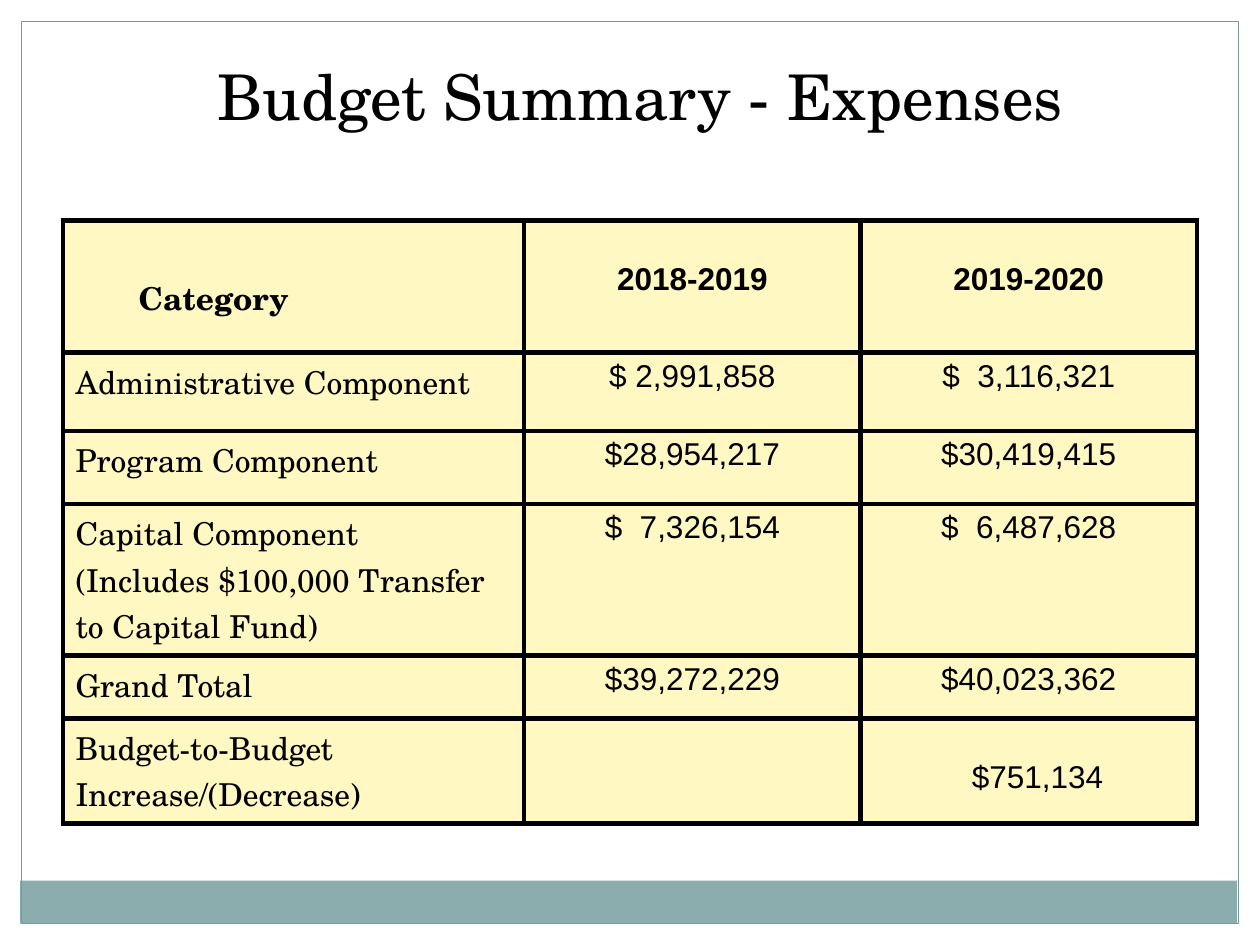
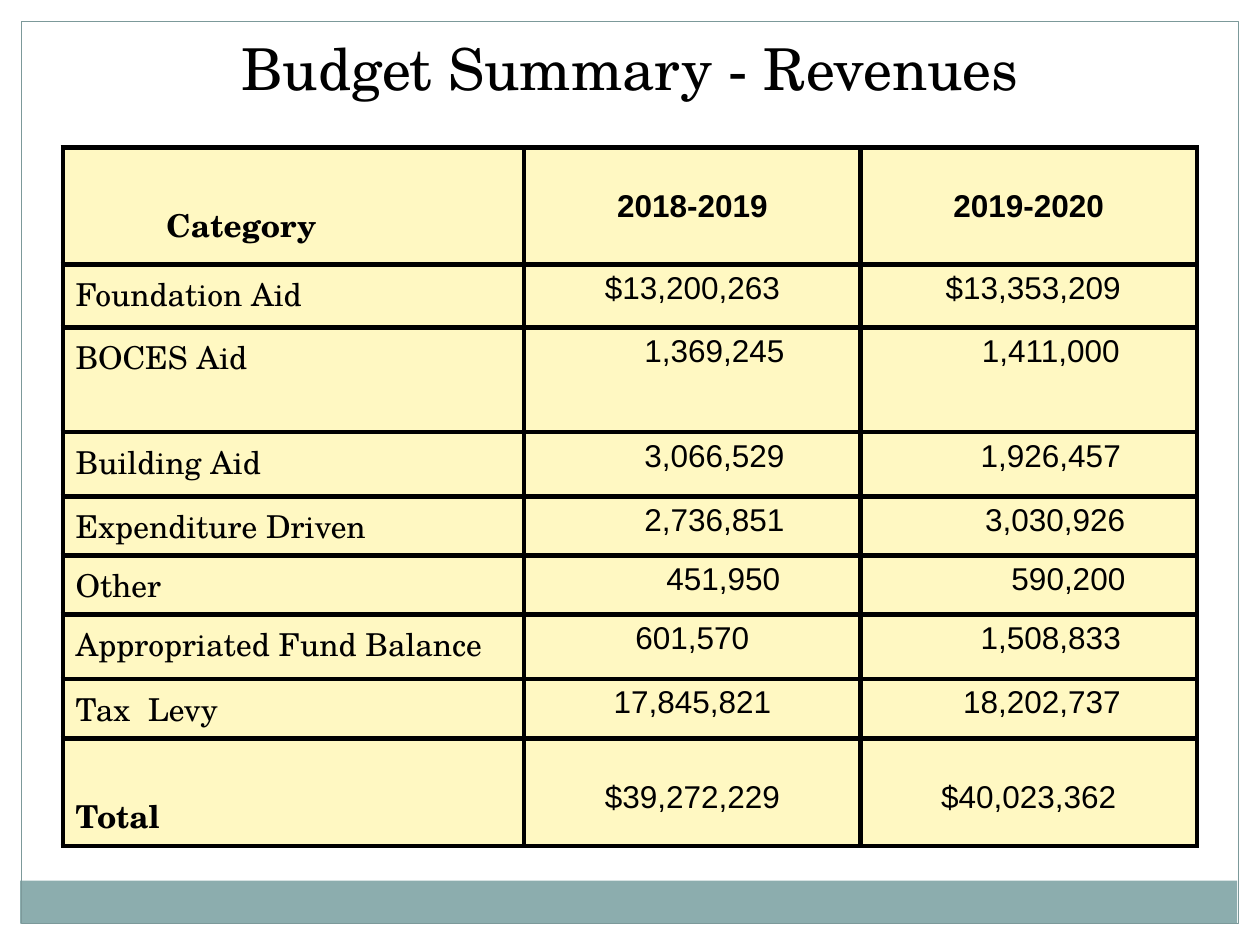
from dataclasses import dataclass

from lxml import etree
from pptx import Presentation
from pptx.dml.color import RGBColor
from pptx.enum.shapes import MSO_SHAPE
from pptx.enum.text import MSO_ANCHOR, PP_ALIGN
from pptx.oxml.ns import qn
from pptx.util import Inches, Pt

RECT = MSO_SHAPE.RECTANGLE
TOP = MSO_ANCHOR.TOP
LEFT, CENTER = PP_ALIGN.LEFT, PP_ALIGN.CENTER

SERIF, SANS = "TeX Gyre Schola", "Arial"
BLACK, WHITE, CREAM = "000000", "FFFFFF", "FFF8C2"
TEAL, TEAL_LINE = "8CADAE", "7C999A"
BORDER_PT = 3
PAD = 0.1
SPACE = 0.07
LABEL_DROP, AMOUNT_DROP = 0.42, 0.33


@dataclass
class Cell:
    text: str
    indent: float = 0
    dropped: bool = False
    bold: bool = False


def shifted(text, spaces):
    return Cell(text, indent=spaces * SPACE)


def header(indent):
    return [Cell("Category", indent, True, True)] + [
        Cell(year, 0, True, True) for year in ("2018-2019", "2019-2020")]


EXPENSES = [
    (1.05, header(0.5)),
    (0.62, ["Administrative Component", "$ 2,991,858", "$  3,116,321"]),
    (0.58, ["Program Component", "$28,954,217", "$30,419,415"]),
    (1.20, ["Capital Component\n(Includes $100,000 Transfer to Capital Fund)",
            "$  7,326,154", "$  6,487,628"]),
    (0.50, ["Grand Total", "$39,272,229", "$40,023,362"]),
    (0.83, ["Budget-to-Budget Increase/(Decrease)", "",
            Cell("$751,134", 2 * SPACE, True)]),
]

REVENUES = [
    (0.93, header(0.72)),
    (0.50, ["Foundation Aid", "$13,200,263", shifted("$13,353,209", 1)]),
    (0.83, ["BOCES Aid", shifted("1,369,245", 5), shifted("1,411,000", 5)]),
    (0.51, ["Building Aid", shifted("3,066,529", 5), shifted("1,926,457", 5)]),
    (0.47, ["Expenditure Driven", shifted("2,736,851", 5), shifted("3,030,926", 6)]),
    (0.47, ["Other", shifted("451,950", 7), shifted("590,200", 9)]),
    (0.51, ["Appropriated Fund Balance", "601,570", shifted("1,508,833", 5)]),
    (0.47, ["Tax  Levy", "17,845,821", shifted("18,202,737", 3)]),
    (0.85, [Cell("Total", 0, True, True), Cell("$39,272,229", 0, True),
            Cell("$40,023,362", 0, True)]),
]


def rgb(value):
    return RGBColor.from_string(value)


def set_attrs(obj, values):
    for name, value in values.items():
        setattr(obj, name, value)


def format_paragraph(p, font, size, align, bold=False):
    p.alignment = align
    set_attrs(p.font, {"name": font, "size": Pt(size), "bold": bold})
    p.font.color.rgb = rgb(BLACK)


def add_frame(s, layout, width, height):
    edge = 0.17
    inner = width - 2 * edge
    parts = [
        ((0, 0, width, edge), WHITE, None),
        ((width - edge, 0, edge, height), WHITE, None),
        ((0, 0, edge, height), WHITE, None),
        ((0.16, 6.99, inner, 0.34), TEAL, None),
        ((edge, edge, inner, height - 2 * edge), None, TEAL_LINE),
    ]
    for position, (box, fill, line) in enumerate(parts, 2):
        sp = s.shapes.add_shape(RECT, *map(Inches, box))
        sp.shadow.inherit = False
        if fill:
            sp.fill.solid()
            sp.fill.fore_color.rgb = rgb(fill)
        else:
            sp.fill.background()
        if line:
            sp.line.color.rgb = rgb(line)
            sp.line.width = Pt(0.75)
        else:
            sp.line.fill.background()
        layout.shapes.element.insert(position, sp.element)


def add_title(s, text, box, size):
    title = s.shapes.title
    set_attrs(title, dict(zip(("left", "top", "width", "height"), map(Inches, box))))
    tf = title.text_frame
    tf.text = text
    set_attrs(tf, {"vertical_anchor": TOP, "word_wrap": True, "margin_top": 0})
    p = tf.paragraphs[0]
    p.line_spacing = 0.95
    format_paragraph(p, SERIF, size, CENTER)


def add_borders(cell):
    tc_pr = cell._tc.get_or_add_tcPr()
    for side in ("a:lnL", "a:lnR", "a:lnT", "a:lnB"):
        ln = etree.SubElement(tc_pr, qn(side), w=str(Pt(BORDER_PT)))
        fill = etree.SubElement(ln, qn("a:solidFill"))
        etree.SubElement(fill, qn("a:srgbClr"), val=BLACK)


def fill_cell(cell, content, is_label):
    if isinstance(content, str):
        content = Cell(content)
    add_borders(cell)
    cell.fill.solid()
    cell.fill.fore_color.rgb = rgb(CREAM)
    drop = LABEL_DROP if is_label else AMOUNT_DROP
    set_attrs(cell, {
        "vertical_anchor": TOP,
        "margin_top": Inches(drop if content.dropped else 0.05),
        "margin_left": Inches(PAD + content.indent),
        "margin_right": Inches(PAD),
    })
    cell.text = content.text
    font, align = (SERIF, LEFT) if is_label else (SANS, CENTER)
    for p in cell.text_frame.paragraphs:
        format_paragraph(p, font, 18, align, content.bold)


def add_budget_table(s, left, top, rows):
    widths = (3.66, 2.67, 2.67)
    height = sum(h for h, _ in rows)
    frame = s.shapes.add_table(len(rows), len(widths), Inches(left), Inches(top),
                               Inches(sum(widths)), Inches(height))
    table = frame.table
    set_attrs(table, {"first_row": False, "horz_banding": False})
    for column, width in zip(table.columns, widths):
        column.width = Inches(width)
    for r, (row_height, contents) in enumerate(rows):
        table.rows[r].height = Inches(row_height)
        for c, content in enumerate(contents):
            fill_cell(table.cell(r, c), content, c == 0)


def add_budget_slide(prs, layout, title, title_box, title_size, table_top, rows):
    s = prs.slides.add_slide(layout)
    add_title(s, title, title_box, title_size)
    add_budget_table(s, 0.5, table_top, rows)
    return s


def main():
    prs = Presentation()
    width, height = 10, 7.5
    prs.slide_width, prs.slide_height = Inches(width), Inches(height)
    layout = prs.slide_layouts[5]
    s = add_budget_slide(prs, layout, "Budget Summary - Expenses",
                         (0.58, 0.5, 9, 1.08), 36, 1.75, EXPENSES)
    add_frame(s, layout, width, height)
    add_budget_slide(prs, layout, "Budget Summary - Revenues",
                     (0.5, 0.3, 9, 1.25), 33, 1.17, REVENUES)
    prs.save("out.pptx")


if __name__ == "__main__":
    main()
